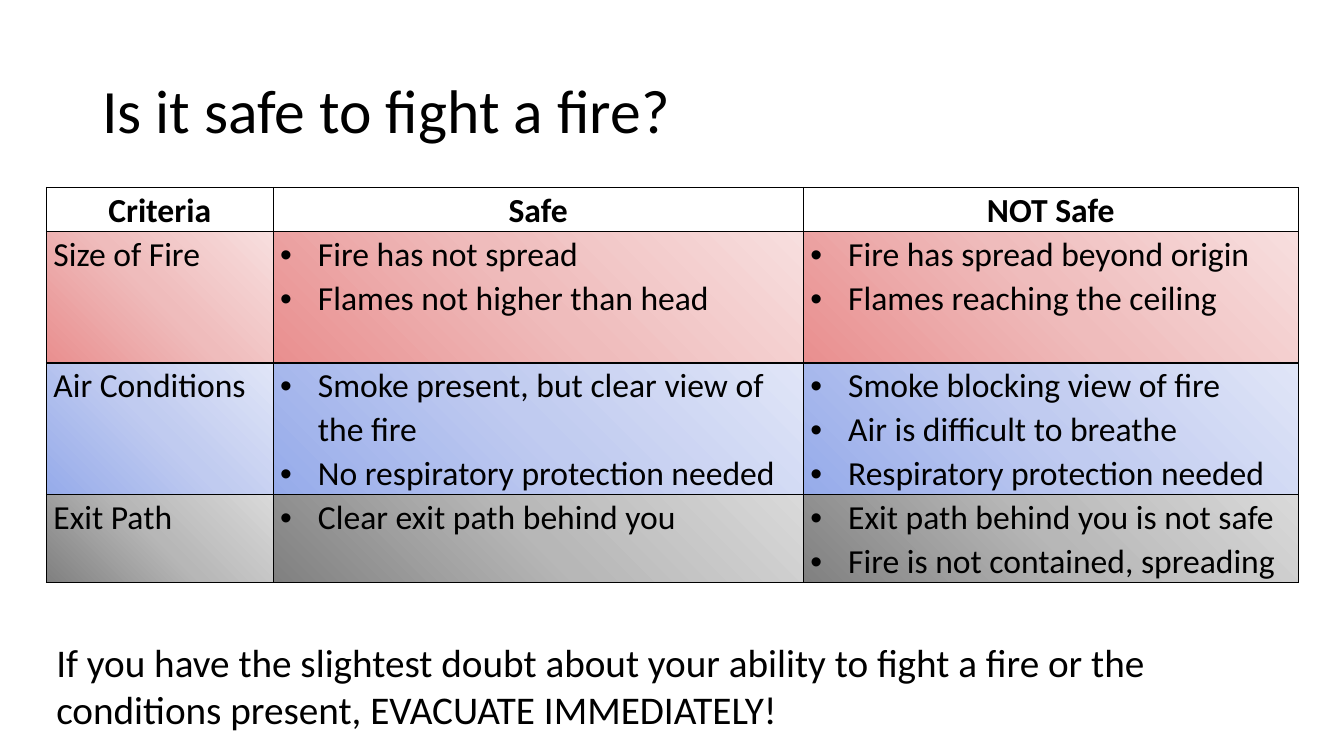
"""Build a slide with a table of criteria for when fighting a fire is safe."""
from lxml import etree
from pptx import Presentation
from pptx import util as u
from pptx.dml.color import RGBColor
from pptx.enum import text
from pptx.oxml import ns

BLACK = "000000"
HEADINGS = ["Criteria", "Safe", "NOT Safe"]
CRITERIA = [
    ("Size of Fire", 94, ["E98F8F", "EFBCBC", "F7DEDE"],
     ["Fire has not spread", "Flames not higher than head"],
     ["Fire has spread beyond origin", "Flames reaching the ceiling"]),
    ("Air Conditions", 94, ["96ABEA", "C0CBF0", "E0E5F7"],
     ["Smoke present, but clear view of the fire", "No respiratory protection needed"],
     ["Smoke blocking view of fire", "Air is difficult to breathe",
      "Respiratory protection needed"]),
    ("Exit Path", 62.8, ["808080", "B7B7B7", "D9D9D9"],
     ["Clear exit path behind you"],
     ["Exit path behind you is not safe", "Fire is not contained, spreading"]),
]


def write(frame, lines, size, bold=False, bullets=False, **layout):
    for index, line in enumerate(lines):
        para = frame.paragraphs[0] if index == 0 else frame.add_paragraph()
        for name, value in layout.items():
            setattr(para, name, value)
        span = para.add_run()
        span.text = line
        font = {"name": "Calibri", "size": u.Pt(size), "bold": bold}
        for name, value in font.items():
            setattr(span.font, name, value)
        span.font.color.rgb = RGBColor.from_string(BLACK)
        if bullets:
            props = para._p.get_or_add_pPr()
            props.set("marL", str(u.Pt(27)))
            props.set("indent", str(-u.Pt(27)))
            etree.SubElement(props, ns.qn("a:buFont"), typeface="Arial")
            etree.SubElement(props, ns.qn("a:buChar"), char="•")


def add_color(parent, color):
    solid = etree.SubElement(parent, ns.qn("a:solidFill"))
    etree.SubElement(solid, ns.qn("a:srgbClr"), val=color)
    return solid


deck = Presentation()
deck.slide_width, deck.slide_height = u.Pt(960), u.Pt(540)
page = deck.slides.add_slide(deck.slide_layouts[6])

title = page.shapes.add_textbox(u.Pt(66), u.Pt(28.75), u.Pt(828), u.Pt(104.4)).text_frame
title.word_wrap = True
title.vertical_anchor = text.MSO_ANCHOR.MIDDLE
write(title, ["Is it safe to fight a fire?"], 44, line_spacing=0.9)

rows = [(31.4, None, [[heading] for heading in HEADINGS])]
rows += [(height, shades, [[name], safe, unsafe])
         for name, height, shades, safe, unsafe in CRITERIA]
frame = page.shapes.add_table(len(rows), 3, u.Pt(33.1), u.Pt(133.9), u.Pt(894.2), u.Pt(282.2))
table = frame.table
table.first_row = table.horz_banding = False
for column, width in zip(table.columns, [162, 378.7, 353.5]):
    column.width = u.Pt(width)

margins = {"margin_left": 5.04, "margin_right": 5.04, "margin_top": 0, "margin_bottom": 0}
for row_index, (height, shades, contents) in enumerate(rows):
    table.rows[row_index].height = u.Pt(height)
    for column_index, lines in enumerate(contents):
        cell = table.cell(row_index, column_index)
        for name, value in margins.items():
            setattr(cell, name, u.Pt(value))
        header = shades is None
        align = text.PP_ALIGN.CENTER if header else text.PP_ALIGN.LEFT
        write(cell.text_frame, lines, 24, bold=header, line_spacing=1.07,
              bullets=not header and column_index > 0, alignment=align)
        props = cell._tc.get_or_add_tcPr()
        for side in "LRTB":
            add_color(etree.SubElement(props, ns.qn(f"a:ln{side}"), w=str(u.Pt(1))), BLACK)
        if header:
            etree.SubElement(props, ns.qn("a:noFill"))
            continue
        gradient = etree.SubElement(props, ns.qn("a:gradFill"), rotWithShape="1")
        stops = etree.SubElement(gradient, ns.qn("a:gsLst"))
        for step, shade in enumerate(shades):
            stop = etree.SubElement(stops, ns.qn("a:gs"), pos=str(step * 50000))
            etree.SubElement(stop, ns.qn("a:srgbClr"), val=shade)
        etree.SubElement(gradient, ns.qn("a:lin"), ang=str(315 * 60000), scaled="1")

advice = page.shapes.add_textbox(u.Pt(33.1), u.Pt(452.2), u.Pt(807), u.Pt(74.9)).text_frame
advice.word_wrap = False
advice.auto_size = text.MSO_AUTO_SIZE.SHAPE_TO_FIT_TEXT
write(advice, ["If you have the slightest doubt about your ability to fight a fire or the",
               "conditions present, EVACUATE IMMEDIATELY!"], 28)

deck.save("out.pptx")
